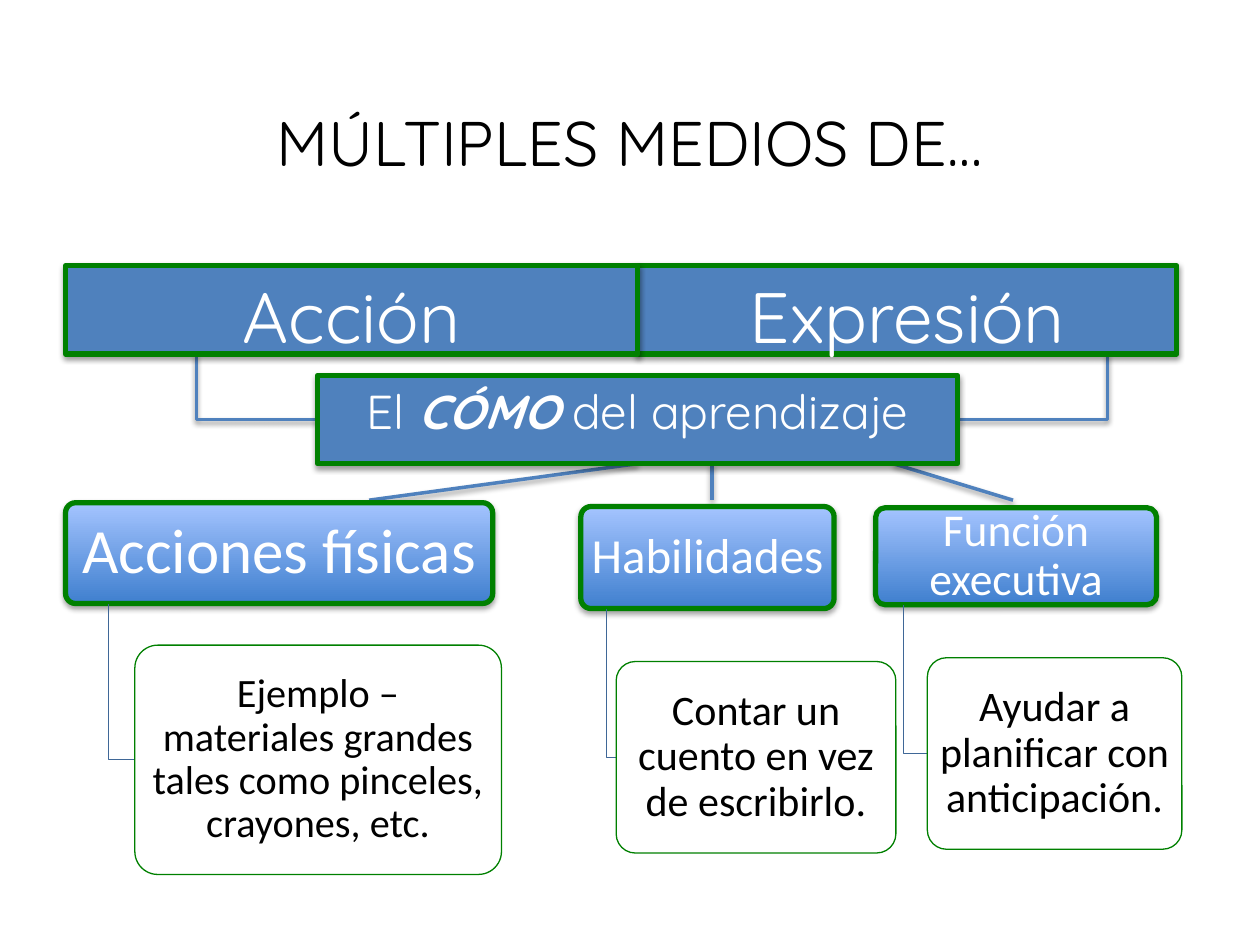
from lxml.etree import SubElement
from pptx import Presentation
from pptx.dml.color import RGBColor
from pptx.enum.shapes import MSO_CONNECTOR, MSO_SHAPE
from pptx.enum.text import MSO_ANCHOR, PP_ALIGN
from pptx.oxml import parse_xml
from pptx.oxml.ns import nsdecls, qn
from pptx.util import Inches, Pt

BLACK = RGBColor(0, 0, 0)
WHITE = RGBColor(255, 255, 255)
BLUE = RGBColor(0x4F, 0x81, 0xBD)
DARK_BLUE = RGBColor(0x3F, 0x67, 0x97)
GREEN = RGBColor(0, 0x80, 0)
GRADIENT = (RGBColor(0x3F, 0x7F, 0xCE), RGBColor(0xA4, 0xC4, 0xFF))

BAR_TEXT = {"name": "Quicksand", "size": Pt(40.7)}
SUBTITLE_TEXT = {"name": "Quicksand", "size": Pt(27.2)}
TITLE_TEXT = {"name": "Quicksand", "size": Pt(36)}
EMPHASIS = {"bold": True, "italic": True}

COLUMNS = [
    {"box": (0.52, 3.99, 3.46, 2.95), "heading": ("Acciones físicas", 36, 3.39, 0.8),
     "detail": ("Ejemplo –\vmateriales grandes tales como pinceles, crayones, etc.", 23, 2.91, 1.82)},
    {"box": (4.61, 4.02, 2.5, 2.75), "heading": ("Habilidades", 28, 2.01, 0.81),
     "detail": ("Contar un cuento en vez de escribirlo.", 24, 2.22, 1.52)},
    {"box": (6.95, 4.03, 2.43, 2.71), "heading": ("Función executiva", 26, 2.23, 0.77),
     "detail": ("Ayudar a planificar con anticipación.", 24, 2.02, 1.52)},
]
BRANCHES = [((5.06, 3.68), (2.93, 3.97)), ((5.65, 3.68), (5.65, 3.97)), ((7.09, 3.68), (8.04, 3.97))]


def format_font(font, color, values):
    """Apply a dict of font values and a colour."""
    for name, value in values.items():
        setattr(font, name, value)
    font.color.rgb = color


def set_outline(line, color, width):
    """Set the colour and the width in points of a line."""
    line.color.rgb = color
    line.width = Pt(width)


def add_shadow(shape, opacity):
    """Give a shape or connector a soft shadow below it."""
    properties = shape._element.spPr
    for effects in properties.findall(qn("a:effectLst")):
        properties.remove(effects)
    properties.append(parse_xml(
        f'<a:effectLst {nsdecls("a")}><a:outerShdw blurRad="{Pt(3.1)}" dist="{Pt(1.6)}" dir="5400000" '
        f'rotWithShape="0"><a:srgbClr val="000000"><a:alpha val="{opacity * 1000}"/></a:srgbClr>'
        '</a:outerShdw></a:effectLst>'))


def add_box(slide, kind, box, line_width):
    """Add a green-outlined shape with wrapping text and no shadow."""
    shape = slide.shapes.add_shape(kind, *map(Inches, box))
    shape.shadow.inherit = False
    set_outline(shape.line, GREEN, line_width)
    shape.text_frame.word_wrap = True
    if kind == MSO_SHAPE.ROUNDED_RECTANGLE:
        shape.adjustments[0] = 0.1
    return shape


def add_bar(slide, box, runs, values):
    """Add a blue bar holding runs of text."""
    bar = add_box(slide, MSO_SHAPE.RECTANGLE, box, 3)
    bar.fill.solid()
    bar.fill.fore_color.rgb = BLUE
    add_shadow(bar, 38)
    bar.text_frame.vertical_anchor = MSO_ANCHOR.TOP
    paragraph = bar.text_frame.paragraphs[0]
    paragraph.alignment = PP_ALIGN.CENTER
    for text, extra in runs:
        run = paragraph.add_run()
        run.text = text
        format_font(run.font, WHITE, {**values, **extra})


def add_card(slide, box, text, size, color, line_width):
    """Add a rounded card with centred text."""
    card = add_box(slide, MSO_SHAPE.ROUNDED_RECTANGLE, box, line_width)
    frame = card.text_frame
    frame.vertical_anchor = MSO_ANCHOR.MIDDLE
    for side in ("left", "right", "top", "bottom"):
        setattr(frame, f"margin_{side}", Inches(0.04))
    paragraph = frame.paragraphs[0]
    paragraph.text = text
    paragraph.alignment = PP_ALIGN.CENTER
    paragraph.line_spacing = 0.9
    format_font(paragraph.font, color, {"name": "Calibri", "size": Pt(size)})
    return card


def add_link(slide, kind, start, end):
    """Add a blue connector with a shadow."""
    connector = slide.shapes.add_connector(kind, *map(Inches, (*start, *end)))
    set_outline(connector.line, BLUE, 2)
    add_shadow(connector, 38)
    return connector


def add_title(slide, box):
    """Place and format the title."""
    title = slide.shapes.title
    title.left, title.top, title.width, title.height = map(Inches, box)
    title.text_frame.vertical_anchor = MSO_ANCHOR.MIDDLE
    paragraph = title.text_frame.paragraphs[0]
    paragraph.text = "MÚLTIPLES MEDIOS DE…"
    paragraph.alignment = PP_ALIGN.CENTER
    format_font(paragraph.font, BLACK, TITLE_TEXT)


def add_header(slide, box):
    """Add the two top bars, the subtitle bar and the elbows joining them."""
    left, top, width, height = box
    bar_height, split = 0.7, 4.54
    subtitle = (left + 2, top + height - bar_height, 5.08, bar_height)
    middle = subtitle[1] + bar_height / 2
    elbows = [(left + 1.04, subtitle[0]), (left + width - 0.55, subtitle[0] + subtitle[2])]
    for start, end in elbows:
        elbow = add_link(slide, MSO_CONNECTOR.ELBOW, (start, top + bar_height), (end, middle))
        guides = elbow._element.spPr.find(qn("a:prstGeom")).get_or_add_avLst()
        SubElement(guides, qn("a:gd"), name="adj1", fmla="val 0")
    add_bar(slide, (left + split, top, width - split, bar_height), [("Expresión", {})], BAR_TEXT)
    add_bar(slide, (left, top, split, bar_height), [("Acción", {})], BAR_TEXT)
    add_bar(slide, subtitle, [("El ", {}), ("CÓMO", EMPHASIS), (" del aprendizaje", {})], SUBTITLE_TEXT)


def add_column(slide, box, heading, detail):
    """Add a heading at the top left, a detail at the bottom right and their link."""
    left, top, width, height = box
    text, size, heading_width, heading_height = heading
    card = add_card(slide, (left, top, heading_width, heading_height), text, size, WHITE, 3)
    card.fill.gradient()
    card.fill.gradient_angle = 90
    for stop, color in zip(card.fill.gradient_stops, GRADIENT):
        stop.color.rgb = color
    add_shadow(card, 35)

    text, size, detail_width, detail_height = detail
    detail_left = left + width - detail_width
    detail_top = top + height - detail_height
    link_left, link_bottom = left + heading_width / 10, detail_top + detail_height / 2
    builder = slide.shapes.build_freeform(Inches(link_left), Inches(top + heading_height))
    corners = [(link_left, link_bottom), (detail_left, link_bottom)]
    builder.add_line_segments([(Inches(x), Inches(y)) for x, y in corners], close=False)
    link = builder.convert_to_shape()
    link.shadow.inherit = False
    link.fill.background()
    set_outline(link.line, DARK_BLUE, 0.75)

    card = add_card(slide, (detail_left, detail_top, detail_width, detail_height), text, size, BLACK, 0.75)
    card.fill.solid()
    card.fill.fore_color.rgb = WHITE


def main():
    """Build and save the slide."""
    presentation = Presentation()
    presentation.slide_width, presentation.slide_height = Inches(10), Inches(7.5)
    slide = presentation.slides.add_slide(presentation.slide_layouts[5])
    add_title(slide, (0.36, 0.5, 9.27, 1.25))
    for start, end in BRANCHES:
        add_link(slide, MSO_CONNECTOR.STRAIGHT, start, end)
    add_header(slide, (0.52, 2.11, 8.82, 1.57))
    for column in COLUMNS:
        add_column(slide, **column)
    presentation.save("out.pptx")


if __name__ == "__main__":
    main()
